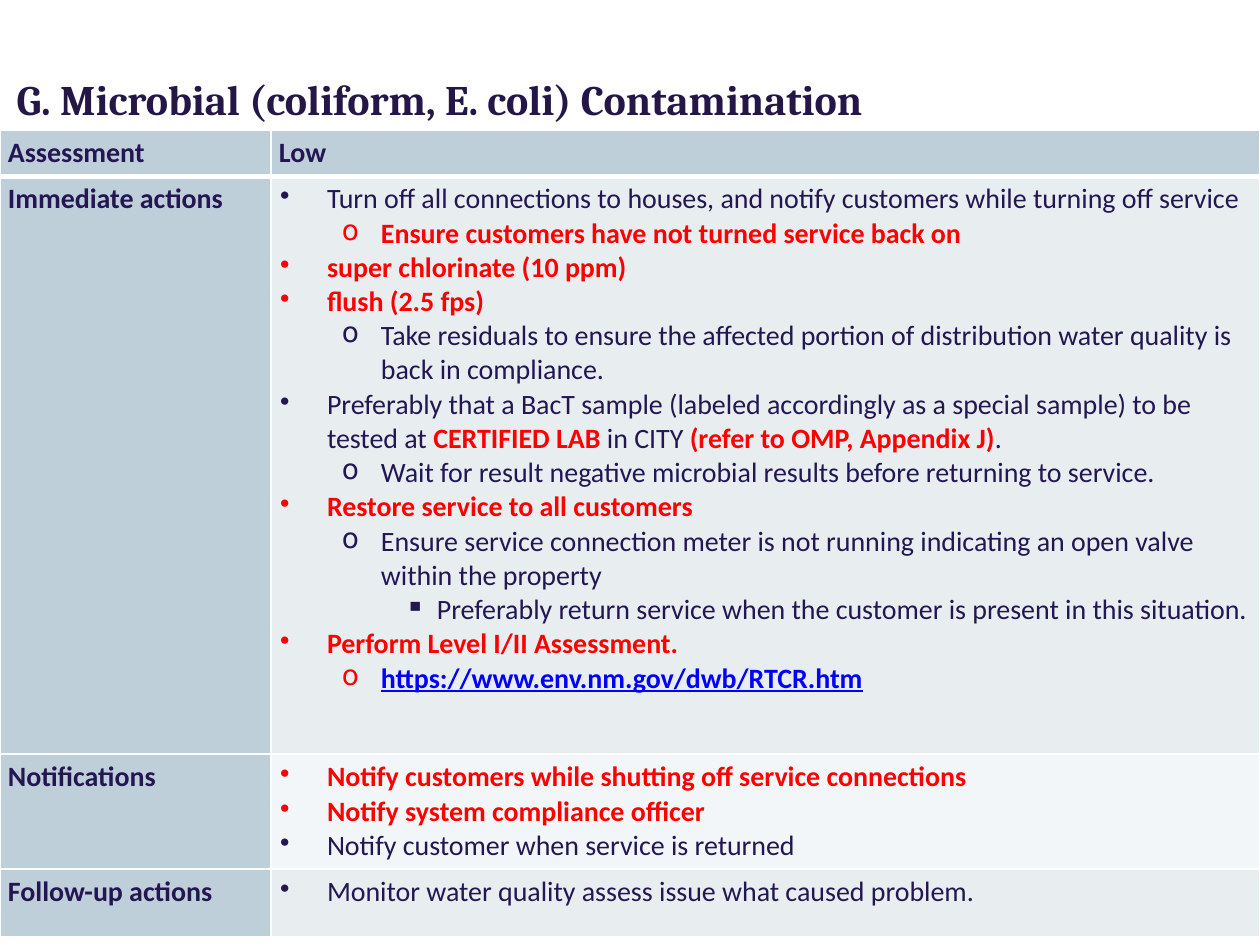
"""Build the microbial contamination response slide."""
from lxml.etree import SubElement
from pptx import Presentation
from pptx.dml.color import RGBColor
from pptx.enum.text import MSO_ANCHOR, MSO_AUTO_SIZE, PP_ALIGN
from pptx.oxml.ns import qn
from pptx.util import Emu, Pt

PX = 914400 / 126
NAVY = RGBColor(0x24, 0x16, 0x52)
TITLE = RGBColor(0x24, 0x16, 0x47)
RED = RGBColor(0xFF, 0x00, 0x00)
BLUE = RGBColor(0x00, 0x00, 0xFF)
WHITE = RGBColor(0xFF, 0xFF, 0xFF)
LABEL = RGBColor(0xBF, 0xCF, 0xD9)
BAND = RGBColor(0xE8, 0xED, 0xF0)
PALE = RGBColor(0xF3, 0xF6, 0xF8)

KEY = dict(color=RED, bold=True)
LINK = dict(color=BLUE, bold=True, underline=True)
LEVELS = [("•", 48, -47), ("o", 102, -39), ("▪", 158, -32)]

ACTIONS = [
    (0, [("Turn off all connections to houses, and notify customers while turning off service", {})]),
    (1, [("Ensure customers have not turned service back on", KEY)]),
    (0, [("super chlorinate (10 ppm)", KEY)]),
    (0, [("flush (2.5 fps)", KEY)]),
    (1, [("Take residuals to ensure the affected portion of distribution water quality is back in compliance.", {})]),
    (0, [("Preferably that a BacT sample (labeled accordingly as a special sample) to be tested at ", {}),
         ("CERTIFIED LAB ", KEY), ("in CITY ", {}), ("(refer to OMP, Appendix J)", KEY), (".", {})]),
    (1, [("Wait for result negative microbial results before returning to service.", {})]),
    (0, [("Restore service to all customers", KEY)]),
    (1, [("Ensure service connection meter is not running indicating an open valve within the property", {})]),
    (2, [("Preferably return service when the customer is present in this situation.", {})]),
    (0, [("Perform Level I/II Assessment.", KEY)]),
    (1, [("https://www.env.nm.gov/dwb/RTCR.htm", LINK)]),
]
NOTICES = [
    (0, [("Notify customers while shutting off service connections", KEY)]),
    (0, [("Notify system compliance officer", KEY)]),
    (0, [("Notify customer when service is returned", {})]),
]
FOLLOW_UP = [(0, [("Monitor water quality assess issue what caused problem.", {})])]
HEADING = [(None, [("Low", dict(bold=True))])]
ROWS = [
    ("Assessment", HEADING, 40, LABEL),
    ("Immediate actions", ACTIONS, 578, BAND),
    ("Notifications", NOTICES, 110, PALE),
    ("Follow-up actions", FOLLOW_UP, 68, BAND),
]


def px(n):
    return Emu(round(n * PX))


def add_text(p, text, font="Calibri", size=16, color=NAVY, bold=False, underline=False):
    r = p.add_run()
    r.text = text
    r.font.name = font
    r.font.size = Pt(size)
    r.font.color.rgb = color
    r.font.bold = bold
    r.font.underline = underline


prs = Presentation()
prs.slide_width, prs.slide_height = px(1260), px(945)
s = prs.slides.add_slide(prs.slide_layouts[5])

title = s.shapes.title
title.left, title.top, title.width, title.height = px(4), px(67), px(910), px(63)
tf = title.text_frame
tf.word_wrap = False
tf.auto_size = MSO_AUTO_SIZE.NONE
tf.vertical_anchor = MSO_ANCHOR.TOP
p = tf.paragraphs[0]
p.alignment = PP_ALIGN.LEFT
add_text(p, "G. Microbial (coliform, E. coli) Contamination",
         font="Cambria", size=24, color=TITLE, bold=True)

height = sum(row[2] for row in ROWS)
table = s.shapes.add_table(len(ROWS), 2, 0, px(130), px(1260), px(height)).table
table.columns[0].width, table.columns[1].width = px(271), px(989)

for i, (label, lines, row_height, fill) in enumerate(ROWS):
    table.rows[i].height = px(row_height)
    label_lines = [(None, [(label, dict(bold=True))])]
    for j, (content, color) in enumerate([(label_lines, LABEL), (lines, fill)]):
        cell = table.cell(i, j)
        cell.margin_left = cell.margin_right = px(8)
        cell.margin_top = cell.margin_bottom = px(6)

        tcPr = cell._tc.get_or_add_tcPr()
        for side in ("lnL", "lnR", "lnT", "lnB"):
            thick = (i, side) in ((0, "lnB"), (1, "lnT"))
            ln = SubElement(tcPr, qn(f"a:{side}"), w=str(Pt(3 if thick else 0.96)))
            line_fill = SubElement(ln, qn("a:solidFill"))
            SubElement(line_fill, qn("a:srgbClr"), val=str(WHITE))
        cell.fill.solid()
        cell.fill.fore_color.rgb = color

        tf = cell.text_frame
        for n, (level, runs) in enumerate(content):
            p = tf.add_paragraph() if n else tf.paragraphs[0]
            p.space_after = Pt(10 if n == len(content) - 1 else 0)
            if level is not None:
                p.level = level
                char, margin, indent = LEVELS[level]
                pPr = p._p.get_or_add_pPr()
                pPr.set("marL", str(px(margin)))
                pPr.set("indent", str(px(indent)))
                bullet_color = RED if runs[0][1] else NAVY
                buClr = SubElement(pPr, qn("a:buClr"))
                SubElement(buClr, qn("a:srgbClr"), val=str(bullet_color))
                SubElement(pPr, qn("a:buChar"), char=char)
            for text, style in runs:
                add_text(p, text, **style)

prs.save("out.pptx")
